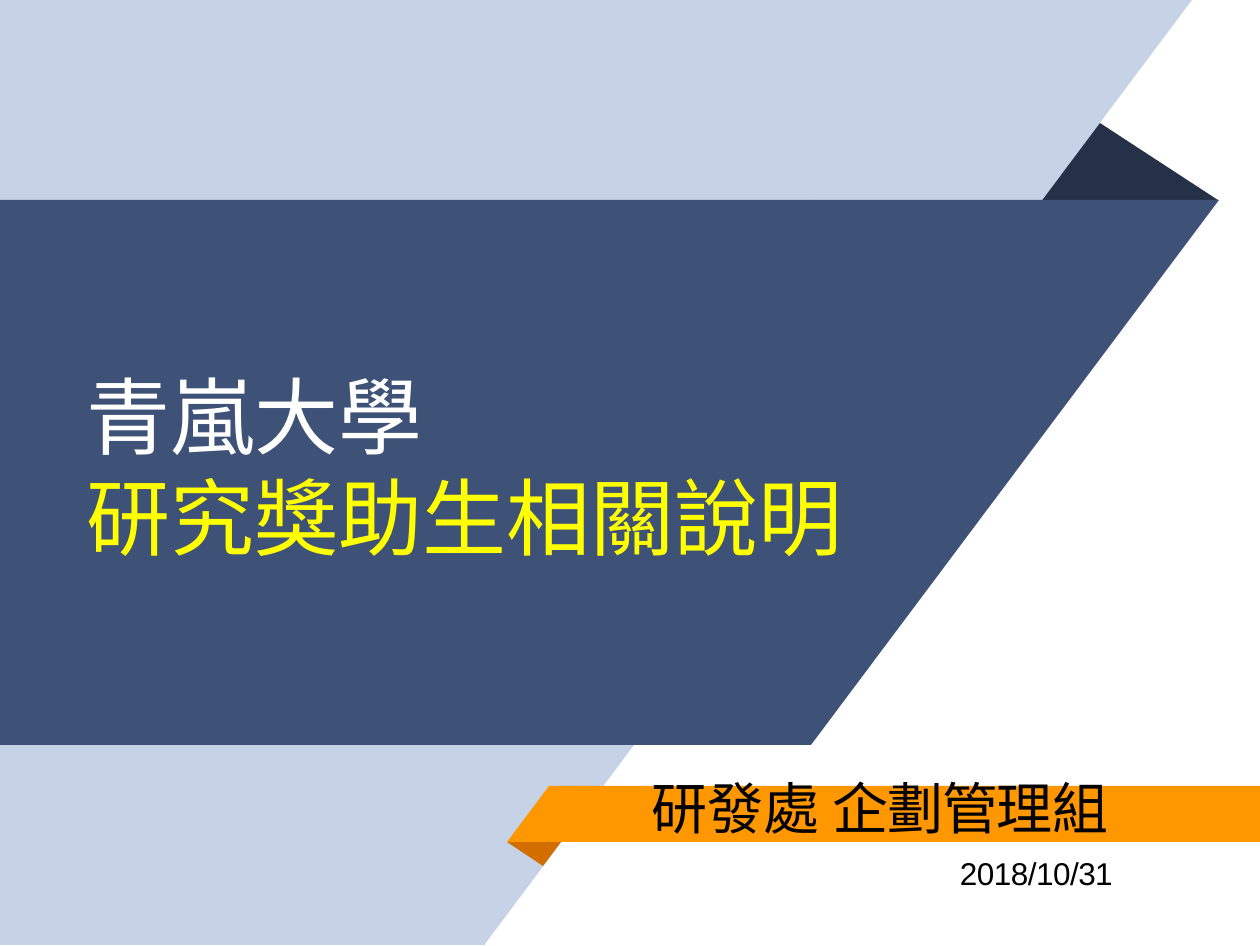
from lxml.etree import SubElement
from pptx import Presentation
from pptx.dml.color import RGBColor
from pptx.enum.shapes import MSO_SHAPE as Shape
from pptx.oxml.ns import qn
from pptx.util import Pt

PX = 914400 // 126
WIDTH, HEIGHT = 1260, 946

NAVY = RGBColor(0x25, 0x31, 0x47)
PALE = RGBColor(0xC6, 0xD2, 0xE6)
BLUE = RGBColor(0x3E, 0x52, 0x78)
RUST = RGBColor(0xD2, 0x6E, 0x00)
ORANGE = RGBColor(0xFF, 0x97, 0x00)
WHITE = RGBColor(0xFF, 0xFF, 0xFF)
YELLOW = RGBColor(0xFF, 0xFF, 0x00)
BLACK = RGBColor(0, 0, 0)

# Edges shared by the bands
BAND_TOP, BAND_BOTTOM = 200, 745
PALE_RIGHT, BLUE_RIGHT = 485, 811
STRIP_TOP, STRIP_BOTTOM, STRIP_LEFT = 786, 842, 549

# Back to front: two points make a rectangle, three a triangle
PANELS = [
    (NAVY, [(1097, 121), (1040, BAND_TOP), (1218, BAND_TOP)]),
    (PALE, [(0, 0), (PALE_RIGHT, BAND_TOP)]),
    (PALE, [(0, BAND_BOTTOM), (PALE_RIGHT, 945)]),
    (PALE, [(1192, 0), (PALE_RIGHT, 0), (PALE_RIGHT, 944)]),
    (BLUE, [(0, BAND_TOP), (BLUE_RIGHT, BAND_BOTTOM)]),
    (BLUE, [(1219, BAND_TOP), (BLUE_RIGHT, BAND_TOP), (BLUE_RIGHT, BAND_BOTTOM)]),
    (RUST, [(561, STRIP_BOTTOM), (507, STRIP_BOTTOM), (543, 866)]),
    (ORANGE, [(STRIP_LEFT, STRIP_TOP), (WIDTH, STRIP_BOTTOM)]),
    (ORANGE, [(STRIP_LEFT, STRIP_TOP), (507, STRIP_BOTTOM), (STRIP_LEFT, STRIP_BOTTOM)]),
]

# Box, font, size, then one (colour, [(text, letter spacing in 1/100 pt)]) per paragraph
TEXTS = [
    ((86, 363, 796, 205), "Noto Sans", 48, [
        (WHITE, [("青嵐大學", -10)]),
        (YELLOW, [("研究獎助生相關說明", 0)]),
    ]),
    ((651, 772, 480, 71), "Noto Sans CJK JP", 32, [
        (BLACK, [("研發處 ", 0), ("企劃管理", -80), ("組", 0)]),
    ]),
    ((959, 852, 156, 42), "Arial", 18, [(BLACK, [("2018/10/31", -30)])]),
]


def add_panel(shapes, colour, points):
    if len(points) == 2:
        (left, top), (right, bottom) = points
        panel = shapes.add_shape(Shape.RECTANGLE, left * PX, top * PX,
                                 (right - left) * PX, (bottom - top) * PX)
    else:
        builder = shapes.build_freeform(*points[0], scale=PX)
        builder.add_line_segments(points[1:], close=True)
        panel = builder.convert_to_shape()
    panel.shadow.inherit = False
    panel.fill.solid()
    panel.fill.fore_color.rgb = colour
    panel.line.fill.background()


def add_text(shapes, area, font_name, size, lines):
    frame = shapes.add_textbox(*(length * PX for length in area)).text_frame
    frame.word_wrap = True
    frame.margin_right = frame.margin_bottom = 0
    frame.margin_left, frame.margin_top = PX, 2 * PX
    for index, (colour, spans) in enumerate(lines):
        para = frame.add_paragraph() if index else frame.paragraphs[0]
        para.space_before = Pt(0 if index else 1)
        for text, spacing in spans:
            span = para.add_run()
            span.text = text
            font = span.font
            font.name, font.size, font.color.rgb = font_name, Pt(size), colour
            # East Asian typeface and letter spacing
            props = span._r.get_or_add_rPr()
            props.set("spc", str(spacing))
            SubElement(props, qn("a:ea")).set("typeface", font_name)


deck = Presentation()
deck.slide_width, deck.slide_height = WIDTH * PX, HEIGHT * PX
page = deck.slides.add_slide(deck.slide_layouts[6])

for panel_colour, corners in PANELS:
    add_panel(page.shapes, panel_colour, corners)
for entry in TEXTS:
    add_text(page.shapes, *entry)

deck.save("out.pptx")
